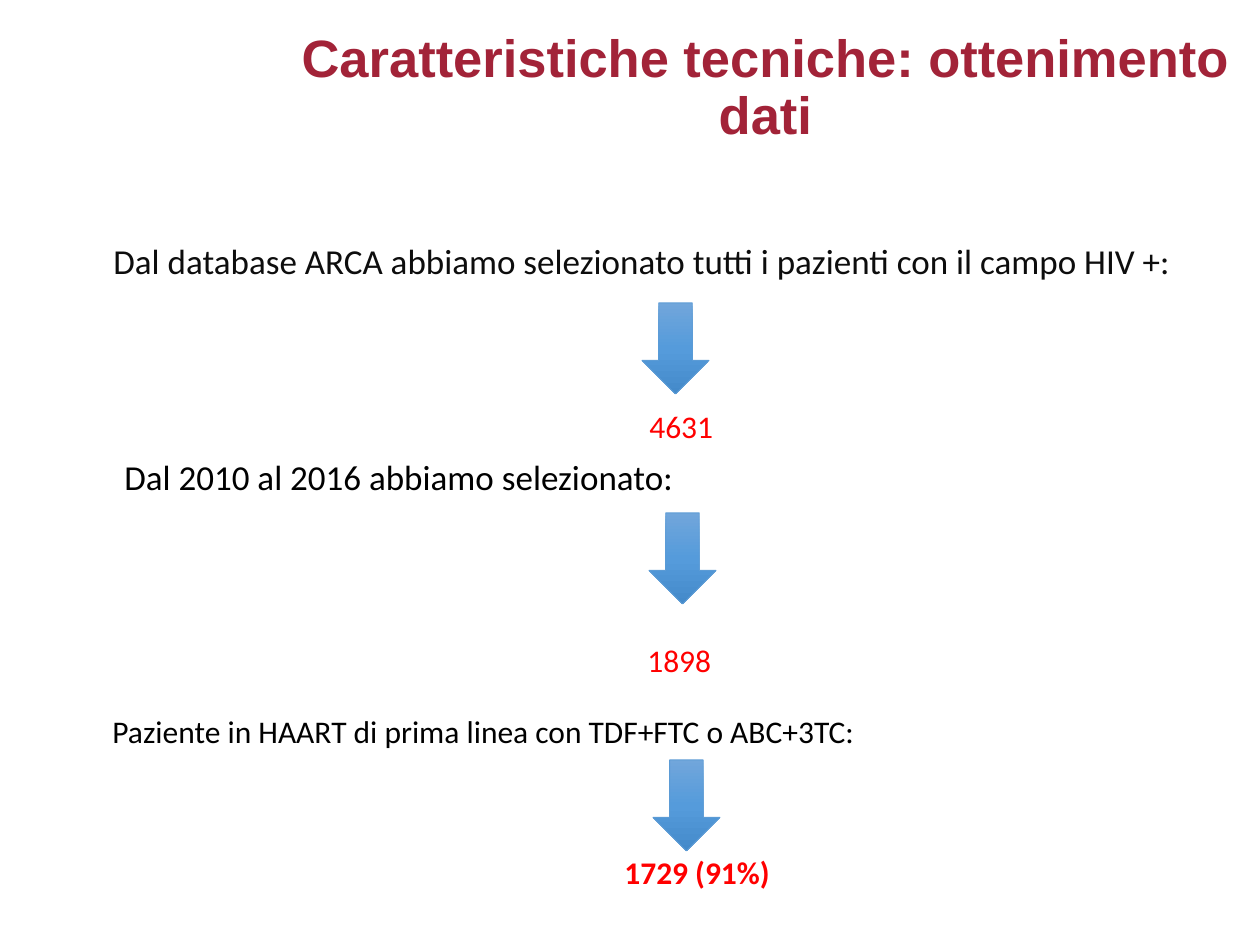
from copy import deepcopy
from dataclasses import dataclass

from pptx import Presentation
from pptx import util as u
from pptx.dml.color import RGBColor
from pptx.enum import shapes, text
from pptx.oxml.ns import qn

PX = 914400 // 126


@dataclass(frozen=True)
class Theme:
    title_font: str = "Arial"
    body_font: str = "Calibri"
    title_size: int = 30
    lead_size: int = 20
    label_size: int = 18
    title: str = "A22338"
    lead: str = "0D0D0D"
    label: str = "000000"
    count: str = "FF0000"
    arrow_stops: tuple = ((0, "71A6DB"), (0.5, "559BDB"), (1, "448ACA"))
    arrow_line: str = "5B9BD5"


THEME = Theme()


def add_text(slide, box, content, size, color, font=THEME.body_font,
             bold=False, wrap=False):
    shape = slide.shapes.add_textbox(*(value * PX for value in box))
    frame = shape.text_frame
    frame.word_wrap = wrap
    if not wrap:
        frame.auto_size = text.MSO_AUTO_SIZE.SHAPE_TO_FIT_TEXT
    paragraph = frame.paragraphs[0]
    paragraph.text = content
    paragraph.font.name = font
    paragraph.font.size = u.Pt(size)
    paragraph.font.bold = bold
    paragraph.font.color.rgb = RGBColor.from_string(color)
    return paragraph


def add_arrow(slide, box):
    shape = slide.shapes.add_shape(shapes.MSO_SHAPE.DOWN_ARROW,
                                   *(value * PX for value in box))
    shape.shadow.inherit = False
    shape.fill.gradient()
    shape.fill.gradient_angle = 270
    # A new gradient has two stops; add the third
    stop_list = shape._element.spPr.find(qn("a:gradFill")).find(qn("a:gsLst"))
    stop_list.append(deepcopy(stop_list[-1]))
    for stop, (position, color) in zip(shape.fill.gradient_stops,
                                       THEME.arrow_stops):
        stop.position = position
        stop.color.rgb = RGBColor.from_string(color)
    shape.line.color.rgb = RGBColor.from_string(THEME.arrow_line)
    shape.line.width = u.Pt(0.5)


def add_title(slide, box):
    paragraph = add_text(slide, box, "Caratteristiche tecniche: ottenimento dati",
                         THEME.title_size, THEME.title, THEME.title_font,
                         bold=True, wrap=True)
    paragraph.alignment = text.PP_ALIGN.CENTER
    paragraph.line_spacing = 0.9


def add_lead(slide, box):
    paragraph = add_text(
        slide, box,
        "Dal database ARCA abbiamo selezionato tutti i pazienti con il campo HIV +:",
        THEME.lead_size, THEME.lead, wrap=True)
    paragraph.line_spacing = 0.9


def add_step(slide, box, count, count_offset, bold=False):
    """An arrow at the top of the box, with the patient count below it."""
    left, top, width, height = box
    add_arrow(slide, (left, top, 67, 91))
    shift_x, shift_y = count_offset
    add_text(slide, (left + shift_x, top + shift_y, width, height - shift_y),
             count, THEME.label_size, THEME.count, bold=bold)


def main():
    presentation = Presentation()
    presentation.slide_width = u.Inches(10)
    presentation.slide_height = u.Inches(7.5)
    slide = presentation.slides.add_slide(presentation.slide_layouts[6])

    add_title(slide, (280, 26, 971, 142))

    # All HIV-positive patients
    add_lead(slide, (101, 238, 1120, 56))
    add_step(slide, (642, 303, 89, 149), "4631", (-5, 98))

    # Patients from 2010 to 2016
    add_text(slide, (112, 449, 580, 55), "Dal 2010 al 2016 abbiamo selezionato:",
             THEME.lead_size, THEME.label)
    add_step(slide, (649, 513, 89, 173), "1898", (-14, 122))

    # First-line therapy
    add_text(slide, (100, 706, 788, 50),
             "Paziente in HAART di prima linea con TDF+FTC o ABC+3TC:",
             THEME.label_size, THEME.label)
    add_step(slide, (653, 760, 171, 137), "1729 (91%)", (-41, 87), bold=True)

    presentation.save("out.pptx")


if __name__ == "__main__":
    main()
